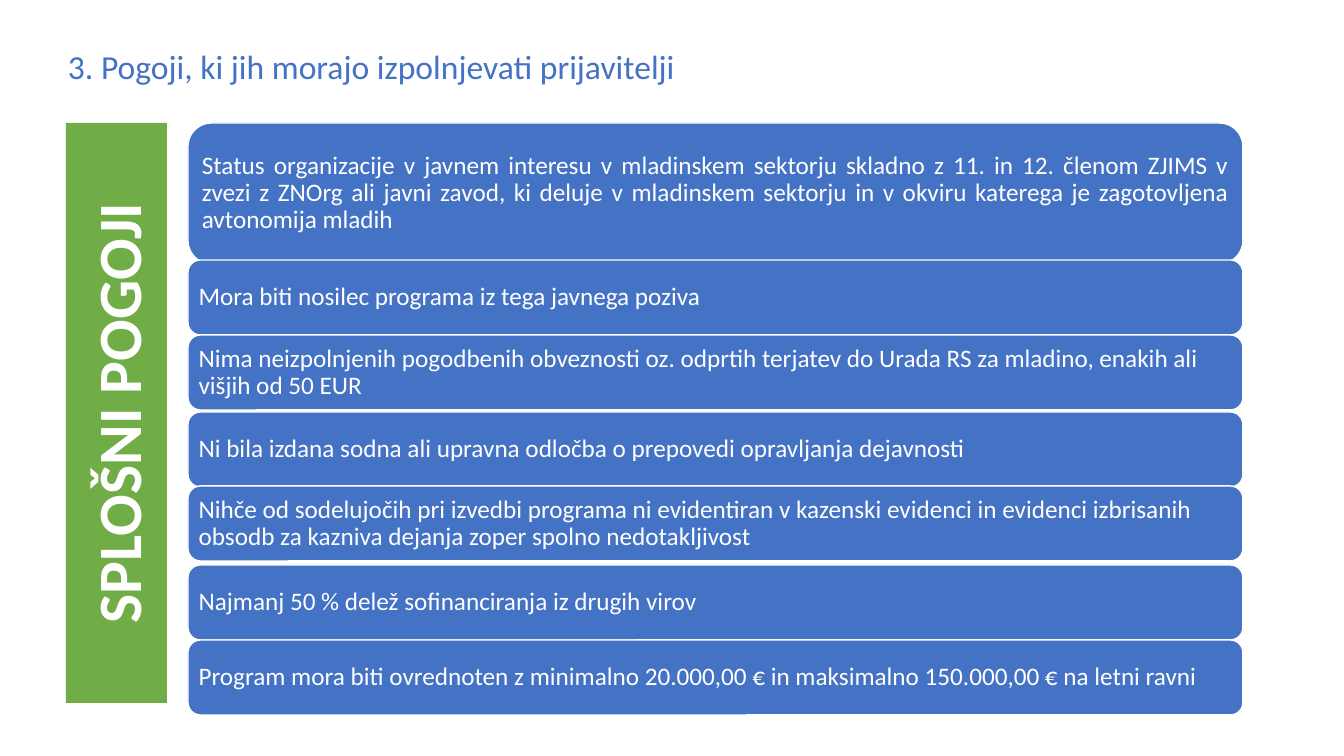
import pptx
import pptx.util
import pptx.dml.color
import pptx.enum.shapes
import pptx.enum.text

PX = 914400 / 100.8
FONT = "Calibri"
BLUE = "4472C4"
GREEN = "70AD47"
WHITE = "FFFFFF"
SHAPE = pptx.enum.shapes.MSO_SHAPE
ALIGN = pptx.enum.text.PP_ALIGN
MIDDLE = pptx.enum.text.MSO_ANCHOR.MIDDLE

TITLE = "3. Pogoji, ki jih morajo izpolnjevati prijavitelji"
LABEL = "SPLOŠNI POGOJI"
ROWS = [
    (0, 141, ALIGN.JUSTIFY, "Status organizacije v javnem interesu v mladinskem sektorju skladno z 11. in 12. členom ZJIMS v zvezi z ZNOrg ali javni zavod, ki deluje v mladinskem sektorju in v okviru katerega je zagotovljena avtonomija mladih"),
    (137, 75, ALIGN.LEFT, "Mora biti nosilec programa iz tega javnega poziva"),
    (212, 75, ALIGN.LEFT, "Nima neizpolnjenih pogodbenih obveznosti oz. odprtih terjatev do Urada RS za mladino, enakih ali višjih od 50 EUR"),
    (289, 75, ALIGN.LEFT, "Ni bila izdana sodna ali upravna odločba o prepovedi opravljanja dejavnosti"),
    (363, 75, ALIGN.LEFT, "Nihče od sodelujočih pri izvedbi programa ni evidentiran v kazenski evidenci in evidenci izbrisanih obsodb za kazniva dejanja zoper spolno nedotakljivost"),
    (442, 75, ALIGN.LEFT, "Najmanj 50 % delež sofinanciranja iz drugih virov"),
    (517, 75, ALIGN.LEFT, "Program mora biti ovrednoten z minimalno 20.000,00 € in maksimalno 150.000,00 € na letni ravni"),
]


def px(n):
    return pptx.util.Emu(round(n * PX))


def color(code):
    return pptx.dml.color.RGBColor.from_string(code)


def write(frame, text, size, code, align, bold=False):
    para = frame.paragraphs[0]
    para.alignment = align
    run = para.add_run()
    run.text = text
    run.font.name = FONT
    run.font.size = pptx.util.Pt(size)
    run.font.bold = bold
    run.font.color.rgb = color(code)
    return para


def block(slide, kind, box, fill):
    shape = slide.shapes.add_shape(kind, *map(px, box))
    shape.shadow.inherit = False
    shape.fill.solid()
    shape.fill.fore_color.rgb = color(fill)
    shape.line.fill.background()
    shape.text_frame.word_wrap = True
    shape.text_frame.vertical_anchor = MIDDLE
    return shape


def title(slide, box):
    frame = slide.shapes.add_textbox(*map(px, box)).text_frame
    frame.word_wrap = False
    frame.auto_size = pptx.enum.text.MSO_AUTO_SIZE.SHAPE_TO_FIT_TEXT
    write(frame, TITLE, 24, BLUE, ALIGN.LEFT)


def rows(slide, box):
    left, top, width = box
    for down, high, align, text in ROWS:
        shape = block(slide, SHAPE.ROUNDED_RECTANGLE, (left, top + down, width, high), BLUE)
        shape.line.color.rgb = color(WHITE)
        shape.line.width = pptx.util.Pt(1)
        frame = shape.text_frame
        frame.margin_left = frame.margin_right = px(7)
        frame.margin_top = frame.margin_bottom = px(7)
        write(frame, text, 18, WHITE, align).line_spacing = 0.9


def banner(slide, box):
    shape = block(slide, SHAPE.RECTANGLE, box, GREEN)
    shape.element.txBody.bodyPr.set("vert", "vert270")
    write(shape.text_frame, LABEL, 44, WHITE, ALIGN.CENTER, True)


def main():
    deck = pptx.Presentation()
    deck.slide_width, deck.slide_height = px(1344), px(756)
    slide = deck.slides.add_slide(deck.slide_layouts[6])
    title(slide, (58, 41, 633, 50))
    rows(slide, (188, 123, 1055))
    banner(slide, (66, 123, 101, 580))
    deck.save("out.pptx")


if __name__ == "__main__":
    main()
